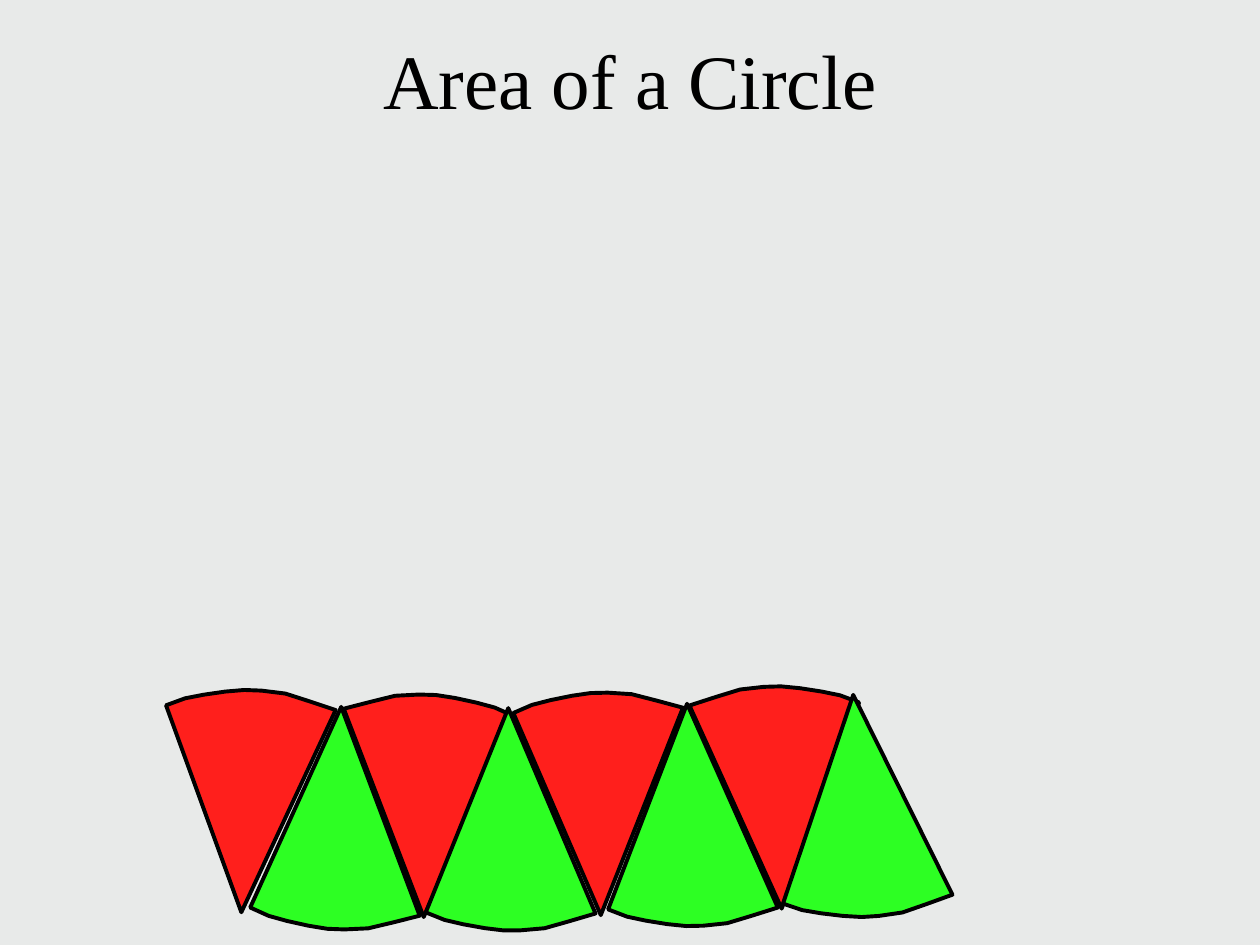
from dataclasses import dataclass

from pptx import Presentation as Deck
from pptx.dml.color import RGBColor as Rgb
from pptx.enum.text import MSO_ANCHOR as Anchor, PP_ALIGN as Align
from pptx.util import Cm, Pt

RED, GREEN, BLACK = "FF1F1C", "2DFF23", "000000"
TALL = 4.44
# Outline of one sector in cm: tip first, then along the arc
ARC = [(0, 0), (3.18, 3.18), (2.74, 3.53), (2.34, 3.84), (1.91, 4.06),
       (1.59, 4.19), (1.22, 4.29), (0.79, 4.38), (0.41, 4.44), (0, TALL)]


@dataclass
class Wedge:
    left: float
    top: float
    turn: float
    color: str
    flip: bool = False


FIRST = [
    Wedge(6.4, 13.59, 204, RED),
    Wedge(4.01, 13.54, 340, RED, flip=True),
    Wedge(5.82, 14.71, 24.4, GREEN),
    Wedge(9.3, 14.71, 22, GREEN),
]
SECOND = [
    Wedge(13.46, 13.46, 200.6, RED),
    Wedge(11.1, 13.56, 336.6, RED, flip=True),
    Wedge(12.95, 14.61, 21, GREEN),
    Wedge(16.41, 14.4, 18.6, GREEN),
]


def paint(target, color: str) -> None:
    target.solid()
    target.fore_color.rgb = Rgb.from_string(color)


def write(shape, text: str, *, size: float, font: str, color: str, align: Align) -> None:
    frame = shape.text_frame
    frame.word_wrap = True
    frame.vertical_anchor = Anchor.MIDDLE
    para = frame.paragraphs[0]
    para.alignment = align
    run = para.add_run()
    run.text = text
    run.font.size = Pt(size)
    run.font.name = font
    paint(run.font.fill, color)


def draw(shapes, wedge: Wedge) -> None:
    dots = [(Cm(x), Cm(TALL - y if wedge.flip else y)) for x, y in ARC]
    pen = shapes.build_freeform(*dots[0])
    pen.add_line_segments(dots[1:], close=True)
    shape = pen.convert_to_shape(Cm(wedge.left), Cm(wedge.top))
    shape.rotation = wedge.turn
    shape.shadow.inherit = False
    paint(shape.fill, wedge.color)
    paint(shape.line.fill, BLACK)
    shape.line.width = Pt(2.25)


def main() -> None:
    deck = Deck()
    deck.slide_width, deck.slide_height = Cm(25.4), Cm(19.05)
    slide = deck.slides.add_slide(deck.slide_layouts[5])
    paint(slide.background.fill, "E8EAE9")

    # Title
    title = slide.shapes.title
    title.left, title.top = Cm(1.91), Cm(0)
    title.width, title.height = Cm(21.59), Cm(3.18)
    write(title, "Area of a Circle", size=44, font="Times New Roman",
          color=BLACK, align=Align.CENTER)

    # Sectors laid side by side, the right half grouped
    for wedge in FIRST:
        draw(slide.shapes, wedge)
    group = slide.shapes.add_group_shape()
    for wedge in SECOND:
        draw(group.shapes, wedge)

    deck.save("out.pptx")


if __name__ == "__main__":
    main()
